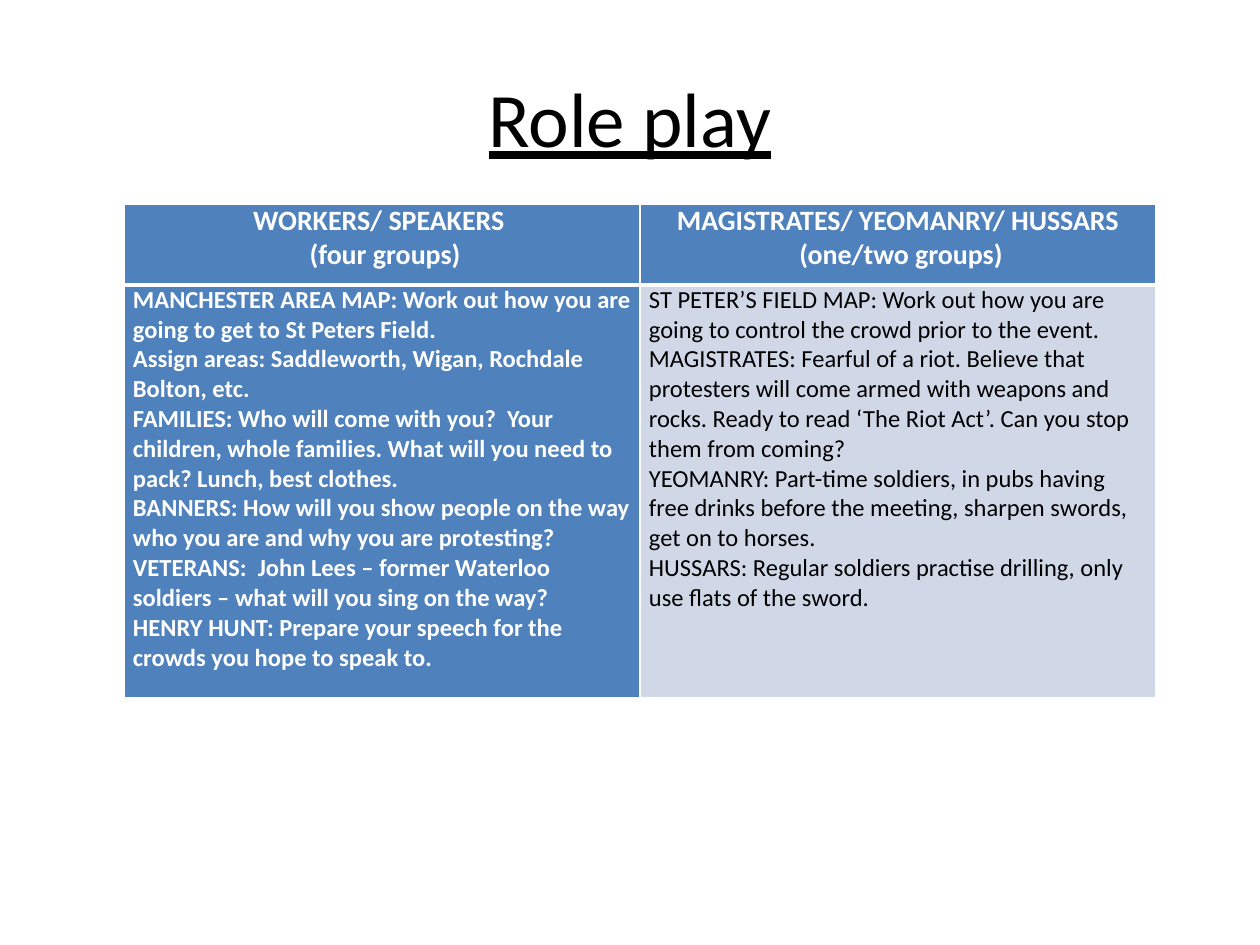
import pptx
import pptx.util
import pptx.dml.color
import pptx.enum.text
import pptx.oxml
import lxml.etree
from pptx.oxml import ns

RGB = pptx.dml.color.RGBColor
ALIGN = pptx.enum.text.PP_ALIGN
ANCHOR = pptx.enum.text.MSO_ANCHOR

# Content
TITLE = "Role play"
HEADERS = [
    ["WORKERS/ SPEAKERS ", " (four groups)"],
    ["MAGISTRATES/ YEOMANRY/ HUSSARS", " (one/two groups)"],
]
TASKS = [
    [
        "MANCHESTER AREA MAP: Work out how you are going to get to St Peters Field.",
        "Assign areas: Saddleworth, Wigan, Rochdale Bolton, etc.",
        "FAMILIES: Who will come with you?  Your children, whole families. "
        "What will you need to pack? Lunch, best clothes.",
        "BANNERS: How will you show people on the way who you are and why you are protesting?",
        "VETERANS:  John Lees – former Waterloo soldiers – what will you sing on the way?",
        "HENRY HUNT: Prepare your speech for the crowds you hope to speak to.",
    ],
    [
        "ST PETER’S FIELD MAP: Work out how you are going to control the crowd "
        "prior to the event.",
        "MAGISTRATES: Fearful of a riot. Believe that protesters will come armed with "
        "weapons and rocks. Ready to read ‘The Riot Act’. Can you stop them from coming?",
        "YEOMANRY: Part-time soldiers, in pubs having free drinks before the meeting, "
        "sharpen swords, get on to horses.",
        "HUSSARS: Regular soldiers practise drilling, only use flats of the sword.",
    ],
]

# Look
FONT = "Calibri"
BLACK = RGB(0x00, 0x00, 0x00)
WHITE = RGB(0xFF, 0xFF, 0xFF)
BLUE = RGB(0x4F, 0x81, 0xBD)
PALE = RGB(0xD0, 0xD8, 0xE8)

# Layout in px, 126 to the inch
SLIDE_W, SLIDE_H = 1260, 945
TITLE_BOX = (63, 38, 1134, 157)
TABLE_X, TABLE_Y = 124, 204
COL_W = 516
ROW_H = [81, 413]
CELL_INSET = 9


def px(n):
    return pptx.util.Emu(round(n * 914400 / 126))


def write(tf, paragraphs, *, size, color, bold=False, underline=False, align=ALIGN.LEFT):
    for i, text in enumerate(paragraphs):
        p = tf.paragraphs[0] if i == 0 else tf.add_paragraph()
        p.alignment = align
        r = p.add_run()
        r.text = text
        f = r.font
        f.name, f.size, f.bold, f.underline = FONT, pptx.util.Pt(size), bold, underline
        f.color.rgb = color


def add_borders(cell, **widths):
    tc_pr = cell._tc.get_or_add_tcPr()
    for side in "LRTB":
        ln = lxml.etree.SubElement(tc_pr, ns.qn(f"a:ln{side}"),
                                   w=str(pptx.util.Pt(widths.get(side, 1))))
        fill = lxml.etree.SubElement(ln, ns.qn("a:solidFill"))
        lxml.etree.SubElement(fill, ns.qn("a:srgbClr"), val=str(WHITE))


def fill_cell(cell, paragraphs, fill, borders, **fmt):
    add_borders(cell, **borders)
    cell.fill.solid()
    cell.fill.fore_color.rgb = fill
    cell.margin_left = cell.margin_right = px(CELL_INSET)
    cell.margin_top = cell.margin_bottom = 0
    write(cell.text_frame, paragraphs, **fmt)


prs = pptx.Presentation()
prs.slide_width, prs.slide_height = px(SLIDE_W), px(SLIDE_H)
s = prs.slides.add_slide(prs.slide_layouts[5])

# Title
title = s.shapes.title
title.left, title.top, title.width, title.height = map(px, TITLE_BOX)
title.text_frame.vertical_anchor = ANCHOR.MIDDLE
write(title.text_frame, [TITLE], size=44, color=BLACK, underline=True, align=ALIGN.CENTER)

# Table of the two sides
table = s.shapes.add_table(2, 2, px(TABLE_X), px(TABLE_Y),
                           px(2 * COL_W), px(sum(ROW_H))).table
for row, height in zip(table.rows, ROW_H):
    row.height = px(height)
for i, (fill, color, bold) in enumerate([(BLUE, WHITE, True), (PALE, BLACK, False)]):
    table.columns[i].width = px(COL_W)
    fill_cell(table.cell(0, i), HEADERS[i], BLUE, {"B": 3},
              size=16, color=WHITE, bold=True, align=ALIGN.CENTER)
    fill_cell(table.cell(1, i), TASKS[i], fill, {"T": 3},
              size=14, color=color, bold=bold)

prs.save("out.pptx")
